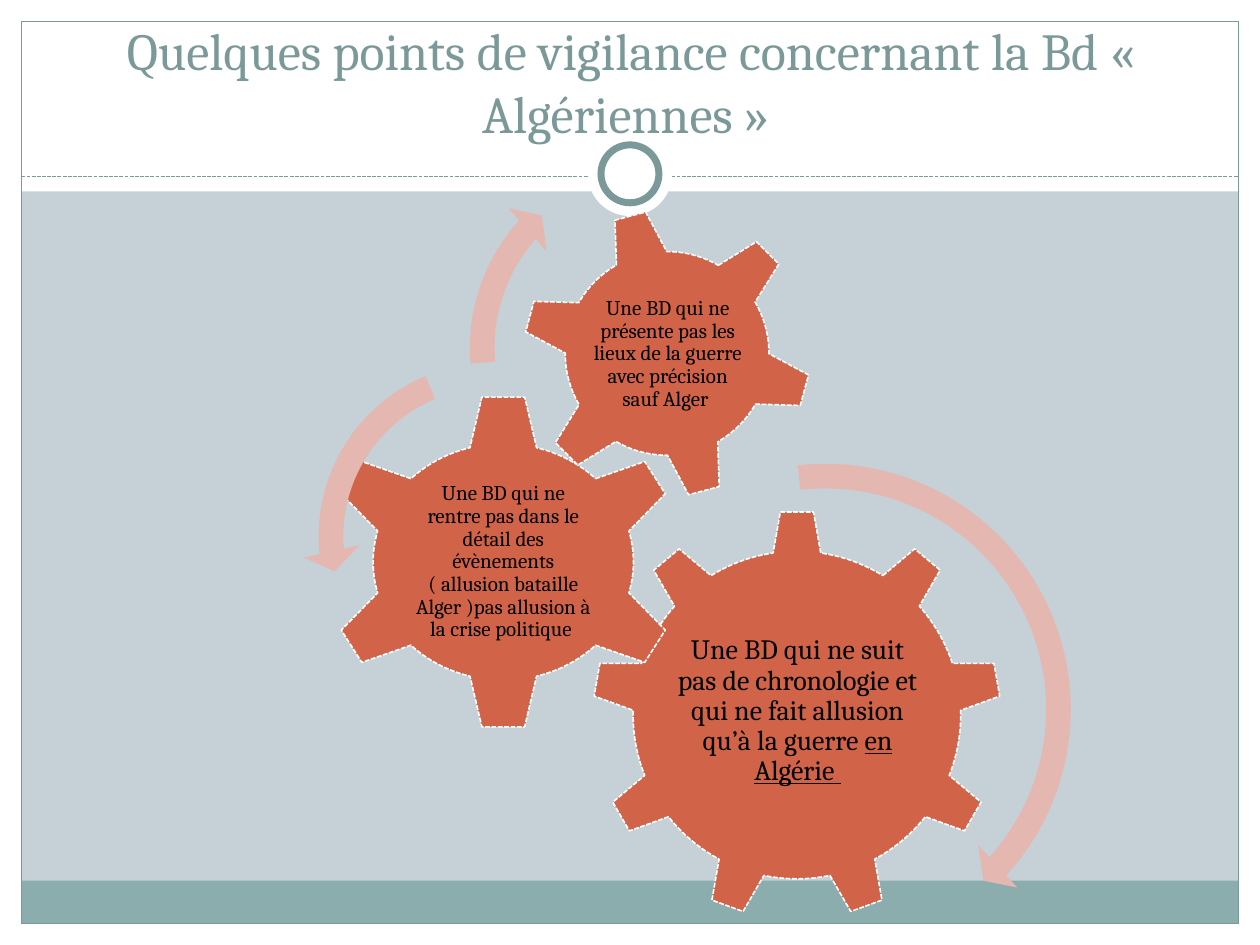
from pptx import Presentation
from pptx.dml.color import RGBColor
from pptx.enum.dml import MSO_LINE
from pptx.enum.shapes import MSO_CONNECTOR, MSO_SHAPE
from pptx.enum.text import MSO_ANCHOR, MSO_AUTO_SIZE, PP_ALIGN
from pptx.oxml.ns import qn
from pptx.util import Inches, Pt
from lxml import etree

WHITE, TEAL, RUST, PINK = "FFFFFF", "7C999A", "D16349", "E5B7B1"


def color(code):
    return RGBColor.from_string(code)


def apply(target, values):
    for name, value in values.items():
        setattr(target, name, value)


def stroke(line, code, width, dash=None):
    line.color.rgb = color(code)
    apply(line, {"width": Pt(width), "dash_style": dash})


def add_form(slide, kind, box, fill=None, line=None):
    form = slide.shapes.add_shape(kind, *map(Inches, box))
    form.shadow.inherit = False
    if fill:
        form.fill.solid()
        form.fill.fore_color.rgb = color(fill)
    else:
        form.fill.background()
    if line:
        stroke(form.line, *line)
    else:
        form.line.fill.background()
    return form


def write(frame, runs, size, code, inset, anchor, spacing):
    apply(frame, {"word_wrap": True, "auto_size": MSO_AUTO_SIZE.NONE,
                  "vertical_anchor": anchor})
    apply(frame, {f"margin_{side}": Inches(inset)
                  for side in ("left", "right", "top", "bottom")})
    para = frame.paragraphs[0]
    apply(para, {"alignment": PP_ALIGN.CENTER, "line_spacing": spacing,
                 "space_before": Pt(0)})
    for text, under in runs:
        run = para.add_run()
        run.text = text
        apply(run.font, {"name": "Cambria", "size": Pt(size),
                         "underline": under, "bold": False})
        run.font.color.rgb = color(code)


def add_frame(slide, box):
    left, top, width, height = box
    edge, head, foot = 0.17, 1.52, 0.34
    inner = width - 2 * edge
    base = height - edge
    for band, fill in (
        ((left, top + base, width, edge), WHITE),
        ((left, top, width, head), WHITE),
        ((left, top, edge, height), WHITE),
        ((left + width - edge, top, edge, height), WHITE),
        ((left + edge, top + base - foot, inner, foot), "8CADAE"),
    ):
        add_form(slide, MSO_SHAPE.RECTANGLE, band, fill)
    add_form(slide, MSO_SHAPE.RECTANGLE,
             (left + edge, top + edge, inner, height - 2 * edge), line=(TEAL, 0.75))
    rule = slide.shapes.add_connector(
        MSO_CONNECTOR.STRAIGHT, Inches(left + edge), Inches(top + 1.4),
        Inches(left + width - edge), Inches(top + 1.4))
    stroke(rule.line, TEAL, 0.75, MSO_LINE.SQUARE_DOT)
    etree.SubElement(rule._element.spPr, qn("a:effectLst"))
    for size, line in ((0.67, None), (0.46, (TEAL, 4))):
        ring = (left + (width - size) / 2, top + 1.38 - size / 2, size, size)
        add_form(slide, MSO_SHAPE.OVAL, ring, WHITE, line)


def add_title(slide, box):
    title = slide.shapes.title
    left, top, width, height = map(Inches, box)
    apply(title, {"left": left, "top": top, "width": width, "height": height})
    write(title.text_frame,
          [("Quelques points de vigilance concernant la Bd «\u00a0Algériennes\u00a0» ".replace("\u00a0", " "), False)],
          29.7, TEAL, 0.05, MSO_ANCHOR.BOTTOM, 1)
    slide.shapes._spTree.append(title._element)


def add_gear(slide, kind, box, inner, runs, size, turn=0):
    gear = add_form(slide, kind, box, RUST, (WHITE, 0.9, MSO_LINE.SQUARE_DOT))
    gear.rotation = turn
    label = slide.shapes.add_textbox(*map(Inches, inner))
    write(label.text_frame, runs, size, "000000", 0.02, MSO_ANCHOR.MIDDLE, 0.9)


def add_arrow(slide, kind, box, bends):
    arrow = add_form(slide, kind, box, PINK)
    for spot, bend in enumerate(bends):
        arrow.adjustments[spot] = bend


def add_gears(slide, box):
    left, top = box[:2]

    def place(x, y, width, height):
        return left + x, top + y, width, height

    gears = (
        (MSO_SHAPE.GEAR_9, (2.3, 2.4, 3.25, 3.25), (2.96, 3.16, 1.94, 1.67),
         [("Une BD qui ne suit pas de chronologie et qui ne fait allusion qu’à la guerre ", False),
          ("en Algérie ", True)], 16, 0),
        (MSO_SHAPE.GEAR_6, (0.16, 1.47, 2.87, 2.68), (0.86, 2.15, 1.47, 1.32),
         [("Une BD qui ne rentre pas dans le détail des évènements ( allusion bataille "
           "Alger )pas allusion à la crise politique ", False)], 12, 0),
        (MSO_SHAPE.GEAR_6, (1.74, 0, 2.31, 2.31), (2.25, 0.51, 1.3, 1.3),
         [("Une BD qui ne présente pas les lieux de la guerre avec précision sauf Alger ",
           False)], 12, 345),
    )
    for kind, outer, inner, runs, size, turn in gears:
        add_gear(slide, kind, place(*outer), place(*inner), runs, size, turn)
    arrows = (
        (MSO_SHAPE.CIRCULAR_ARROW, (2.07, 1.9, 4.16, 4.16),
         (0.047, 2.99, 25.39, 158.129, 0.055)),
        (MSO_SHAPE.LEFT_CIRCULAR_ARROW, (0, 1.1, 3.02, 3.02),
         (0.065, 4.3, 104.891, 148.378, 0.075)),
        (MSO_SHAPE.CIRCULAR_ARROW, (1.2, -0.52, 3.26, 3.26),
         (0.06, 3.941, 133.138, 105.082, 0.07)),
    )
    for kind, outer, bends in arrows:
        add_arrow(slide, kind, place(*outer), bends)


def main():
    deck = Presentation()
    apply(deck, {"slide_width": Inches(10), "slide_height": Inches(7.5)})
    slide = deck.slides.add_slide(deck.slide_layouts[5])
    slide.background.fill.solid()
    slide.background.fill.fore_color.rgb = color("C5D1D7")
    add_frame(slide, (0, 0, 10, 7.5))
    add_title(slide, (0.35, 0.36, 9.33, 0.83))
    add_gears(slide, (2.4, 1.65, 6.23, 6.06))
    deck.save("out.pptx")


if __name__ == "__main__":
    main()
